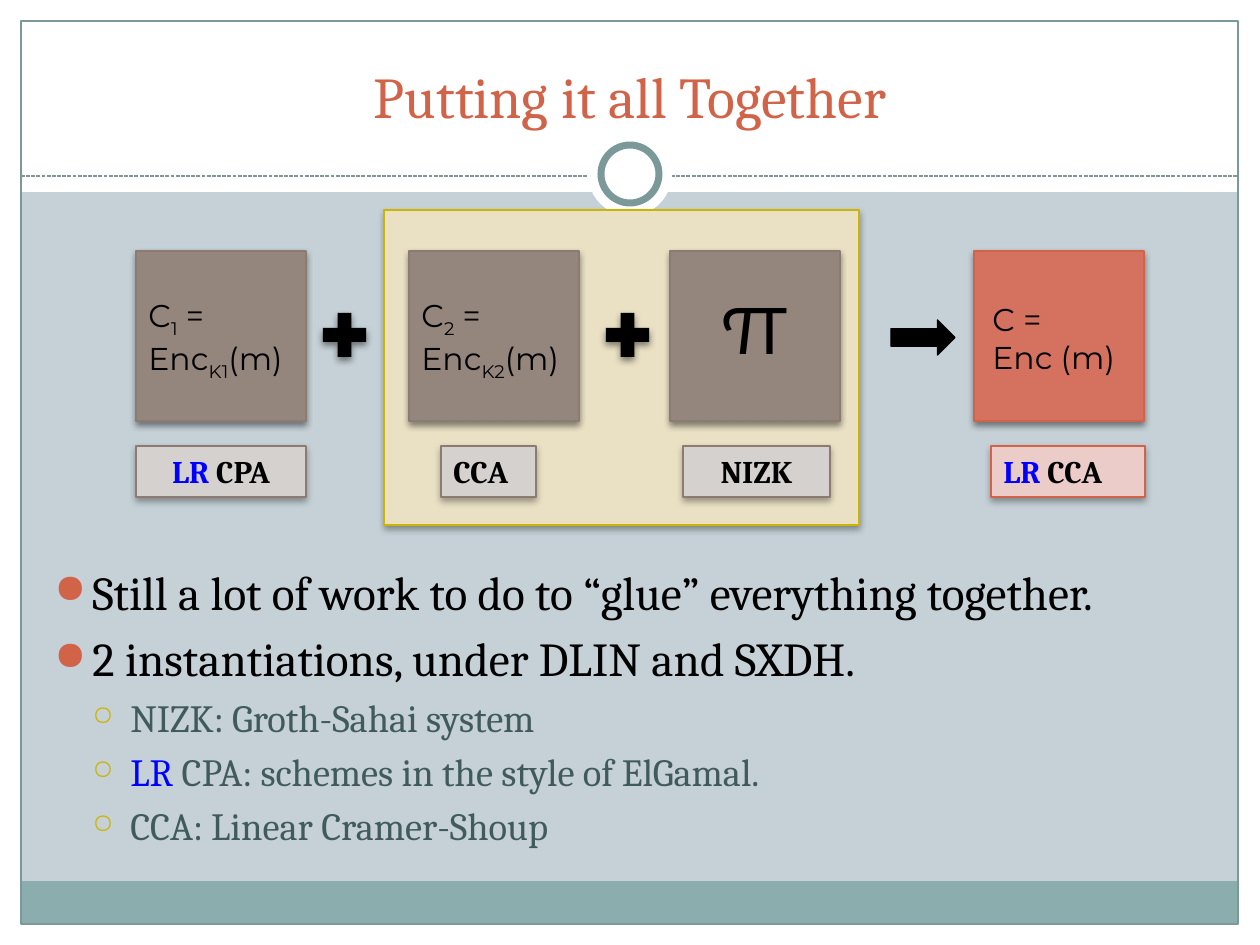
from lxml.etree import SubElement
from pptx import Presentation
from pptx.dml.color import RGBColor
from pptx.enum.dml import MSO_LINE_DASH_STYLE as Dash
from pptx.enum.shapes import MSO_CONNECTOR as Connector, MSO_SHAPE as Shape
from pptx.enum.text import MSO_ANCHOR as Anchor, MSO_AUTO_SIZE as AutoSize, PP_ALIGN as Align
from pptx.oxml.ns import qn
from pptx.util import Emu, Pt

PX = 914400 / 126
COLORS = {
    "backdrop": "C5D1D7", "white": "FFFFFF", "footer": "8CADAE", "frame": "7C999A",
    "red": "D16349", "red_block": "D4725F", "red_label": "ECCCC9",
    "gold": "CCB400", "panel": "EAE1C5",
    "brown": "95867D", "brown_edge": "8C7B70", "brown_label": "D5D1CF",
    "black": "000000", "blue": "0000FF", "teal": "415B5C",
}
BULLETS = [
    {"char": "●", "color": "red", "percent": 85, "size": 27, "before": 5.4},
    {"char": "○", "color": "gold", "percent": 70, "size": 22, "before": 4.4},
]
INDENT = 38
TITLE_FORMAT = {"name": "Cambria", "size": Pt(33)}
LABEL_FORMAT = {"name": "Cambria", "size": Pt(18), "bold": True}
FORMULA_FORMAT = {"name": "Montserrat", "size": Pt(18)}
PROOF_FORMAT = {"name": "Montserrat", "size": Pt(50)}


def px(*lengths):
    """Turn pixel lengths into EMU."""
    return [Emu(round(length * PX)) for length in lengths]


def rgb(name):
    """Look up a named colour."""
    return RGBColor.from_string(COLORS[name])


def add_shadow(shape, opacity):
    """Give a shape a soft shadow that falls straight down."""
    effects = shape._element.spPr.find(qn("a:effectLst"))
    outer = SubElement(effects, qn("a:outerShdw"), blurRad="50800", dist="25400",
                       dir="5400000", rotWithShape="0")
    black = SubElement(outer, qn("a:srgbClr"), val=COLORS["black"])
    SubElement(black, qn("a:alpha"), val=str(opacity * 1000))


def add_block(slide, kind, box, fill=None, edge=None, width=0.75, opacity=0):
    """Add a preset shape with its fill, outline and shadow."""
    block = slide.shapes.add_shape(kind, *px(*box))
    block.shadow.inherit = False
    if fill:
        block.fill.solid()
        block.fill.fore_color.rgb = rgb(fill)
    else:
        block.fill.background()
    if edge:
        block.line.color.rgb = rgb(edge)
        block.line.width = Pt(width)
    else:
        block.line.fill.background()
    if opacity:
        add_shadow(block, opacity)
    return block


def write_runs(paragraph, runs, font_format):
    """Write (text, colour, is subscript) runs in one format."""
    for text, color, subscript in runs:
        run = paragraph.add_run()
        run.text = text
        for attribute, value in font_format.items():
            setattr(run.font, attribute, value)
        run.font.color.rgb = rgb(color)
        if subscript:
            run._r.get_or_add_rPr().set("baseline", "-25000")


def write_lines(shape, lines, font_format, align=Align.LEFT, anchor=Anchor.TOP):
    """Fill a shape with one paragraph for each list of runs."""
    frame = shape.text_frame
    settings = {"word_wrap": True, "auto_size": AutoSize.NONE, "vertical_anchor": anchor}
    for attribute, value in settings.items():
        setattr(frame, attribute, value)
    for index, runs in enumerate(lines):
        paragraph = frame.add_paragraph() if index else frame.paragraphs[0]
        paragraph.alignment = align
        write_runs(paragraph, runs, font_format)


def add_formula(slide, box, lines, font_format=FORMULA_FORMAT):
    """Add a text box that holds a formula."""
    write_lines(slide.shapes.add_textbox(*px(*box)), lines, font_format)


def add_label(slide, left, width, runs, align, fill="brown_label", edge="brown_edge"):
    """Add a security label below a block."""
    label = add_block(slide, Shape.RECTANGLE, (left, 446, width, 51), fill, edge, opacity=35)
    write_lines(label, [runs], LABEL_FORMAT, align)


def add_frame(slide):
    """Draw the borders, footer, divider and ring of the theme."""
    for box, fill, edge in [
        ((0, 924, 1260, 21), "white", None),
        ((0, 0, 1260, 192), "white", None),
        ((0, 0, 21, 945), "white", None),
        ((1239, 0, 21, 945), "white", None),
        ((21, 881, 1217, 43), "footer", None),
        ((21, 21, 1217, 903), None, "frame"),
    ]:
        add_block(slide, Shape.RECTANGLE, box, fill, edge)
    divider = slide.shapes.add_connector(Connector.STRAIGHT, *px(21, 176, 1239, 176))
    divider.line.color.rgb = rgb("frame")
    divider.line.width = Pt(0.75)
    divider.line.dash_style = Dash.SQUARE_DOT
    SubElement(divider._element.spPr, qn("a:effectLst"))
    add_block(slide, Shape.OVAL, (588, 132, 84, 84), "white")
    add_block(slide, Shape.OVAL, (601, 145, 58, 58), "white", "frame", 4)


def add_title(slide):
    """Place the title in front of the frame."""
    title = slide.shapes.title
    slide.shapes._spTree.append(title._element)
    title.left, title.top, title.width, title.height = px(42, 31, 1176, 105)
    write_lines(title, [[("Putting it all Together", "red", False)]],
                TITLE_FORMAT, Align.CENTER, Anchor.BOTTOM)


def add_points(slide):
    """Add the two-level bullet list."""
    points = [
        (0, [("Still a lot of work to do to “glue” everything together.", "black", False)]),
        (0, [("2 instantiations, under DLIN and SXDH.", "black", False)]),
        (1, [("NIZK: Groth-Sahai system", "teal", False)]),
        (1, [("LR ", "blue", False),
             ("CPA: schemes in the style of ElGamal.", "teal", False)]),
        (1, [("CCA: Linear Cramer-Shoup", "teal", False)]),
    ]
    frame = slide.shapes.add_textbox(*px(42, 557, 1172, 325)).text_frame
    frame.word_wrap = True
    for index, (level, runs) in enumerate(points):
        bullet = BULLETS[level]
        paragraph = frame.add_paragraph() if index else frame.paragraphs[0]
        paragraph.level = level
        if index:
            paragraph.space_before = Pt(bullet["before"])
        margin, hanging = px(INDENT * (level + 1), -INDENT)
        properties = paragraph._p.get_or_add_pPr()
        properties.set("marL", str(margin))
        properties.set("indent", str(hanging))
        tint = SubElement(properties, qn("a:buClr"))
        SubElement(tint, qn("a:srgbClr"), val=COLORS[bullet["color"]])
        SubElement(properties, qn("a:buSzPct"), val=str(bullet["percent"] * 1000))
        SubElement(properties, qn("a:buChar"), char=bullet["char"])
        write_runs(paragraph, runs, {"name": "Cambria", "size": Pt(bullet["size"])})


def add_scheme(slide):
    """Draw the ciphertext parts, the proof and the result."""
    add_block(slide, Shape.RECTANGLE, (384, 210, 475, 315), "panel", "gold", opacity=35)
    for left, fill, edge in [(136, "brown", "brown_edge"), (409, "brown", "brown_edge"),
                             (670, "brown", "brown_edge"), (974, "red_block", "red")]:
        add_block(slide, Shape.RECTANGLE, (left, 251, 170, 170), fill, edge, opacity=45)
    add_block(slide, Shape.RIGHT_ARROW, (891, 320, 64, 35), "black", "black")
    for left in (315, 598):
        add_block(slide, Shape.MATH_PLUS, (left, 305, 59, 60), "black", opacity=45)
    for left, number in [(136, "1"), (409, "2")]:
        add_formula(slide, (left, 290, 195, 89), [[
            ("C", "black", False), (number, "black", True), (" = Enc", "black", False),
            ("K" + number, "black", True), ("(m)", "black", False)]])
    add_formula(slide, (712, 261, 170, 118), [[("π", "black", False)]], PROOF_FORMAT)
    add_formula(slide, (980, 294, 195, 89),
                [[("C =", "black", False)], [("Enc (m)", "black", False)]])
    resilient = ("LR ", "blue", False)
    chosen_cipher = ("CCA", "black", False)
    add_label(slide, 136, 170, [resilient, ("CPA", "black", False)], Align.CENTER)
    add_label(slide, 441, 95, [chosen_cipher], Align.LEFT)
    add_label(slide, 683, 147, [("NIZK", "black", False)], Align.CENTER)
    add_label(slide, 991, 154, [resilient, chosen_cipher], Align.LEFT, "red_label", "red")


def main():
    """Build and save the slide."""
    deck = Presentation()
    deck.slide_width, deck.slide_height = px(1260, 945)
    slide = deck.slides.add_slide(deck.slide_layouts[5])
    slide.background.fill.solid()
    slide.background.fill.fore_color.rgb = rgb("backdrop")
    add_frame(slide)
    add_title(slide)
    add_points(slide)
    add_scheme(slide)
    deck.save("out.pptx")


if __name__ == "__main__":
    main()
